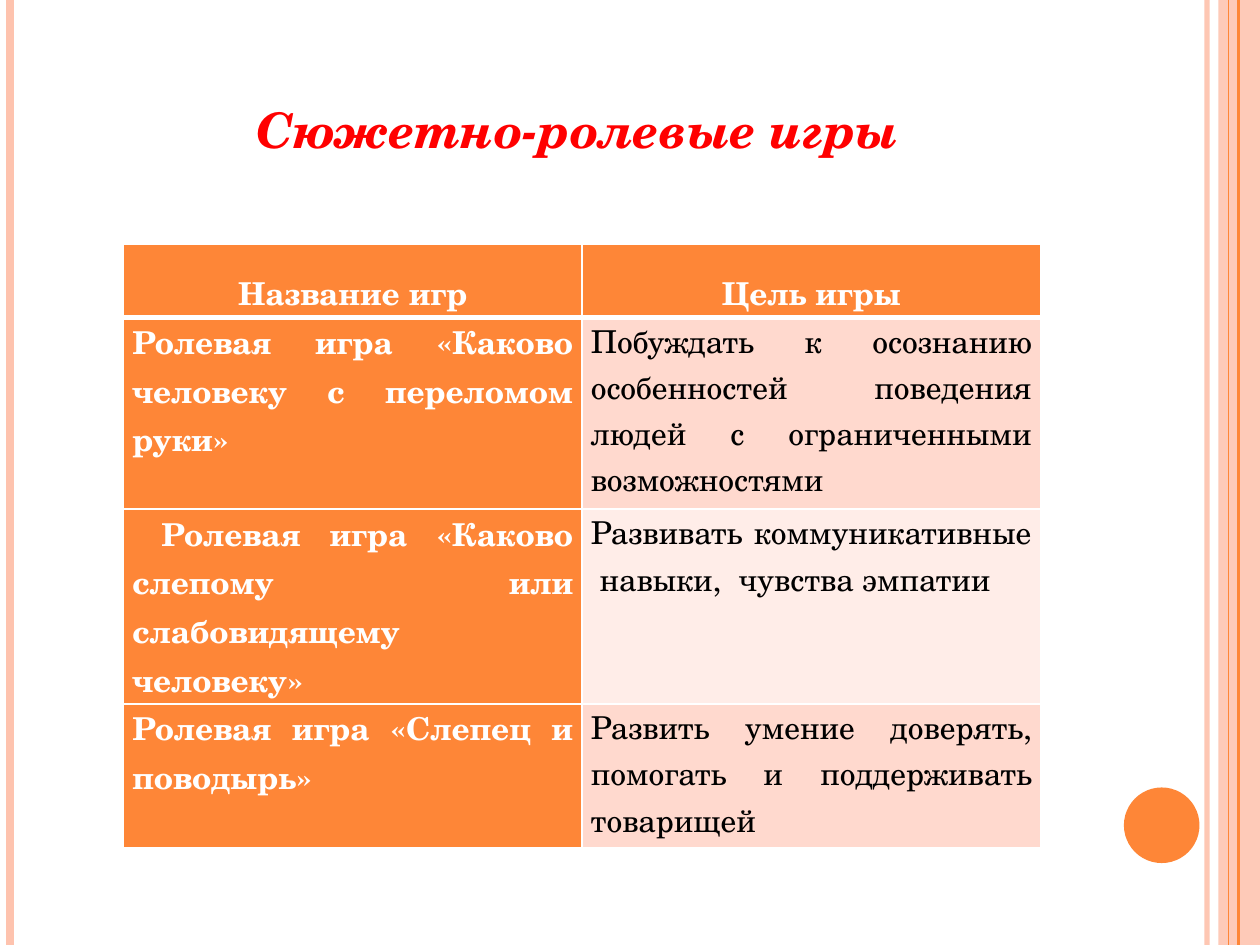
from pptx import Presentation
from pptx.dml.color import RGBColor
from pptx.enum.shapes import MSO_CONNECTOR as Conn, MSO_SHAPE as Kind
from pptx.enum.text import MSO_ANCHOR as Anchor, PP_ALIGN as Align
from pptx.oxml.ns import qn
from pptx.util import Inches, Pt
from lxml.etree import SubElement as Sub

FONT = "TeX Gyre Schola"
ORANGE = RGBColor(0xFE, 0x86, 0x37)
PEACH = RGBColor(0xFE, 0xC3, 0xAE)
ROSE = RGBColor(0xFF, 0xD9, 0xCE)
PALE = RGBColor(0xFF, 0xED, 0xE8)
RED = RGBColor(0xFF, 0, 0)
WHITE = RGBColor(0xFF, 0xFF, 0xFF)
BLACK = RGBColor(0, 0, 0)

WIDE, HIGH = 10, 7.5
RAILS = [(9.58, PEACH, 3, 93), (0.08, PEACH, 4.5, 100),
         (9.83, ORANGE, 1.5, 100), (9.75, ORANGE, 0.75, 100)]
ROWS = [
    ("Название игр", "Цель игры"),
    ("Ролевая игра «Каково человеку с переломом руки»",
     "Побуждать к осознанию особенностей поведения людей с ограниченными возможностями"),
    (" Ролевая игра «Каково слепому или слабовидящему человеку»",
     "Развивать коммуникативные  навыки,  чувства эмпатии"),
    ("Ролевая игра «Слепец и поводырь»",
     "Развить умение доверять, помогать и поддерживать товарищей"),
]
TALL = [0.51, 1.52, 1.52, 1.14]


def fade(fill, share):
    tint = fill._xPr.find(qn("a:solidFill"))[0]
    Sub(tint, qn("a:alpha"), val=str(share * 1000))


def add_rail(slide, x, color, width, share):
    rail = slide.shapes.add_connector(Conn.STRAIGHT, Inches(x), 0, Inches(x), Inches(HIGH))
    rail.line.color.rgb = color
    rail.line.width = Pt(width)
    if share < 100:
        fade(rail.line.fill, share)
    Sub(rail._element.spPr, qn("a:effectLst"))


def add_block(slide, kind, box, color):
    shape = slide.shapes.add_shape(kind, *map(Inches, box))
    shape.shadow.inherit = False
    shape.fill.solid()
    shape.fill.fore_color.rgb = color
    shape.line.fill.background()
    return shape


def add_frame(slide):
    band = add_block(slide, Kind.RECTANGLE, (9.67, 0, WIDE - 9.67, HIGH), PEACH)
    fade(band.fill, 87)
    for rail in RAILS:
        add_rail(slide, *rail)
    add_block(slide, Kind.OVAL, (8.92, 6.25, 0.6, 0.6), ORANGE)


def style(para, size, color, bold, align):
    para.alignment = align
    font = para.font
    font.name, font.size, font.bold = FONT, Pt(size), bold
    font.color.rgb = color


def set_title(slide, box):
    title = slide.shapes.title
    title.left, title.top, title.width, title.height = map(Inches, box)
    frame = title.text_frame
    frame.text = "Сюжетно-ролевые игры"
    frame.vertical_anchor = Anchor.BOTTOM
    para = frame.paragraphs[0]
    style(para, 28, RED, True, Align.CENTER)
    para.font.italic = True


def set_edges(cell, head, under):
    props = cell._tc.get_or_add_tcPr()
    widths = {"L": 1, "R": 1, "T": 3 if under else 1, "B": 3 if head else 1}
    for i, (side, width) in enumerate(widths.items()):
        edge = props.makeelement(qn("a:ln" + side), {"w": str(Pt(width))})
        Sub(Sub(edge, qn("a:solidFill")), qn("a:srgbClr"), val=str(WHITE))
        props.insert(i, edge)


def set_cell(cell, text, row, col):
    head = row == 0
    strong = head or col == 0
    cell.text = text
    cell.margin_left = cell.margin_right = Inches(0.07)
    cell.margin_top = cell.margin_bottom = 0
    cell.vertical_anchor = Anchor.TOP
    cell.fill.solid()
    cell.fill.fore_color.rgb = ORANGE if strong else (ROSE if row % 2 else PALE)
    para = cell.text_frame.paragraphs[0]
    style(para, 18, WHITE if strong else BLACK, strong,
          Align.CENTER if head else Align.JUSTIFY)
    if head:
        para.line_spacing = 1.5
    set_edges(cell, head, row == 1)


def add_games(slide, box):
    table = slide.shapes.add_table(len(ROWS), 2, *map(Inches, box)).table
    table.first_col = True
    for r, texts in enumerate(ROWS):
        table.rows[r].height = Inches(TALL[r])
        for c, text in enumerate(texts):
            set_cell(table.cell(r, c), text, r, c)


def main():
    deck = Presentation()
    deck.slide_width, deck.slide_height = Inches(WIDE), Inches(HIGH)
    slide = deck.slides.add_slide(deck.slide_layouts[5])
    add_frame(slide)
    set_title(slide, (0.5, 0.3, 8.17, 1.01))
    add_games(slide, (0.98, 1.94, 7.28, sum(TALL)))
    deck.save("out.pptx")


if __name__ == "__main__":
    main()
